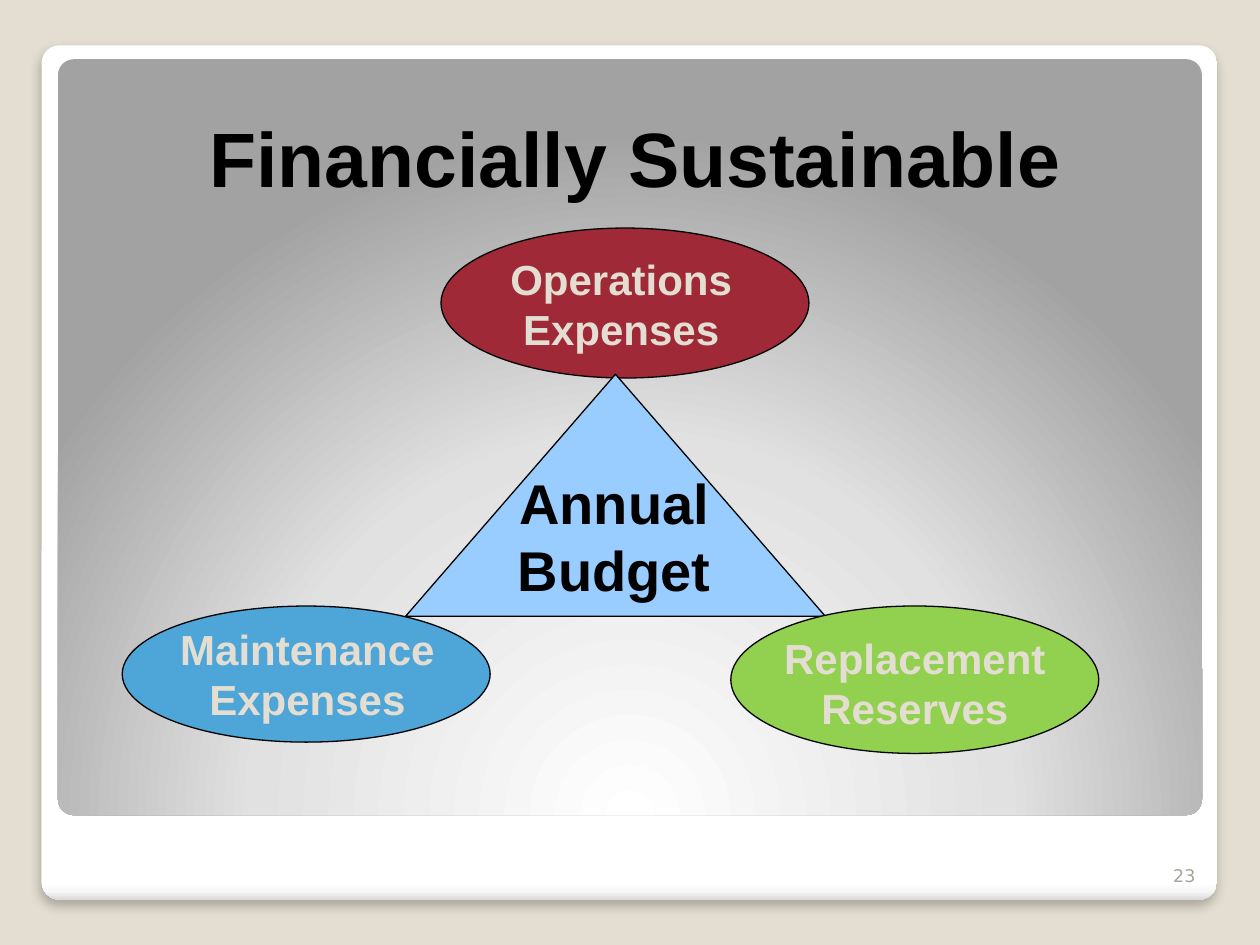
from lxml import etree
from pptx import Presentation
from pptx import util as u
from pptx.dml.color import RGBColor
from pptx.enum import shapes, text
from pptx.oxml.ns import qn

SHAPE = shapes.MSO_SHAPE
ALIGN = text.PP_ALIGN
ANCHOR = text.MSO_ANCHOR


def rgb(color):
    return RGBColor.from_string(color)


def add(parent, tag, **attrs):
    """Append a DrawingML element with the given attributes."""
    return etree.SubElement(parent, qn("a:" + tag),
                            {k: str(v) for k, v in attrs.items()})


class Deck:
    """Style and current slide; lengths are cells of a 100 x 75 grid."""
    COLS, ROWS = 100, 75
    FONT, BLACK, CREAM = "Arial", "000000", "E3DED1"

    def __init__(self, width, height):
        self.prs = Presentation()
        self.prs.slide_width, self.prs.slide_height = u.Inches(width), u.Inches(height)
        self.s = self.prs.slides.add_slide(self.prs.slide_layouts[6])
        self.s.background.fill.solid()
        self.s.background.fill.fore_color.rgb = rgb(self.CREAM)

    def box(self, x, y, w, h):
        col = self.prs.slide_width / self.COLS
        row = self.prs.slide_height / self.ROWS
        return [round(v) for v in (x * col, y * row, w * col, h * row)]

    def shape(self, kind, at, color):
        """Preset shape with a flat fill and a thin black outline."""
        sp = self.s.shapes.add_shape(kind, *self.box(*at))
        sp.shadow.inherit = False
        sp.fill.solid()
        sp.fill.fore_color.rgb = rgb(color)
        sp.line.color.rgb = rgb(self.BLACK)
        sp.line.width = u.Pt(0.75)
        return sp

    def panel(self, at, stops, focus=None):
        """Rounded panel with a vertical gradient, or a radial one at focus."""
        sp = self.shape(SHAPE.ROUNDED_RECTANGLE, at, "FFFFFF")
        sp.adjustments[0] = 0.021
        sp.line.fill.background()
        solid = sp._element.spPr.find(qn("a:solidFill"))
        grad = etree.Element(qn("a:gradFill"), rotWithShape="1")
        gs_list = add(grad, "gsLst")
        for pos, color in stops:
            add(add(gs_list, "gs", pos=pos * 1000), "srgbClr", val=color)
        if focus:
            rect = {side: pct * 1000 for side, pct in zip("ltrb", focus)}
            add(add(grad, "path", path="circle"), "fillToRect", **rect)
        else:
            add(grad, "lin", ang=90 * 60000, scaled=0)
        solid.getparent().replace(solid, grad)
        return sp

    def drop_shadow(self, sp, opacity, blur, dist):
        effects = sp._element.spPr.find(qn("a:effectLst"))
        shadow = add(effects, "outerShdw", blurRad=u.Pt(blur), dist=u.Pt(dist),
                     dir=90 * 60000, algn="t", rotWithShape=0)
        add(add(shadow, "srgbClr", val=self.BLACK), "alpha", val=opacity * 1000)

    def label(self, at, lines, size, color=BLACK, font=FONT, bold=True,
              align=ALIGN.CENTER, anchor=ANCHOR.TOP):
        tf = self.s.shapes.add_textbox(*self.box(*at)).text_frame
        tf.word_wrap = True
        tf.vertical_anchor = anchor
        for i, line in enumerate(lines):
            p = tf.add_paragraph() if i else tf.paragraphs[0]
            p.alignment = align
            r = p.add_run()
            r.text = line
            r.font.name, r.font.size, r.font.bold = font, u.Pt(size), bold
            r.font.color.rgb = rgb(color)


def main():
    d = Deck(10, 7.5)

    # White card and grey panel behind the content
    card = d.panel((3.3, 3.6, 93.3, 67.8),
                   [(0, "FFFFFF"), (98, "FFFFFF"), (99, "F7F7F7"), (100, "DADADA")])
    card.line.color.rgb = rgb("A4A4A4")
    card.line.width = u.Pt(0.16)
    d.drop_shadow(card, opacity=25, blur=6, dist=4)
    d.panel((4.6, 4.7, 90.8, 60),
            [(0, "FFFFFF"), (55, "E1E1E1"), (100, "A2A2A2")],
            focus=(50, 175, 50, -75))

    # Slide number
    d.label((91.3, 66.8, 5, 4), ["23 "], 10, "A8A49B", "DejaVu Sans", False,
            ALIGN.RIGHT, ANCHOR.BOTTOM)

    # Budget triangle and the ellipses at its corners
    d.shape(SHAPE.OVAL, (35, 18.1, 29.2, 11.9), "9F2936")
    d.shape(SHAPE.ISOSCELES_TRIANGLE, (32.2, 29.7, 33.3, 19.2), "99CCFF")
    d.label((36.7, 36.7, 24.1, 11.7), ["Annual Budget"], 32)
    d.shape(SHAPE.OVAL, (58, 48.1, 29.2, 11.7), "92D050")
    d.shape(SHAPE.OVAL, (9.7, 48.1, 29.2, 10.8), "4EA5D8")

    # Ellipse labels
    for at, lines in (
        ((36.8, 19.6, 25, 9), ["Operations", "Expenses"]),
        ((11.1, 49, 26.6, 9), ["Maintenance", "Expenses"]),
        ((59.7, 49.7, 25.8, 9), ["Replacement Reserves"]),
    ):
        d.label(at, lines, 24, d.CREAM)

    # Title
    d.label((9.2, 8.3, 82.5, 8.4), ["Financially Sustainable"], 44)

    d.prs.save("out.pptx")


if __name__ == "__main__":
    main()
